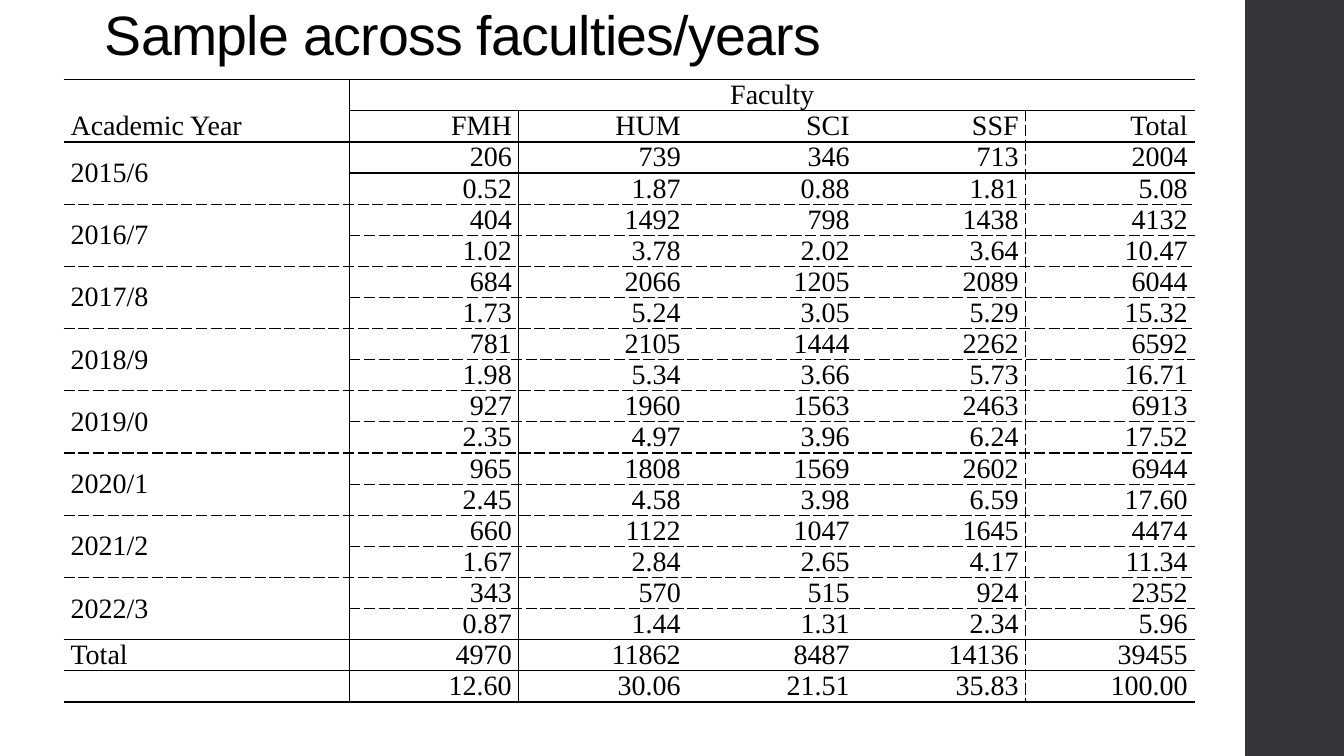
from pptx import Presentation
from pptx.dml.color import RGBColor
from pptx.enum.shapes import MSO_SHAPE as Shape
from pptx.enum.text import MSO_ANCHOR as Anchor, MSO_AUTO_SIZE as AutoSize, PP_ALIGN as Align
from pptx.oxml.ns import qn
from pptx.util import Inches, Pt
from lxml.etree import SubElement

BLACK = RGBColor(0x00, 0x00, 0x00)
CHARCOAL = RGBColor(0x35, 0x35, 0x37)
NO_GRID_STYLE = "{2D5ABB26-0587-4C30-8999-92F81FD0307C}"
SOLID, THICK, DASHED = (1, "solid"), (1.5, "solid"), (1, "dash")

HEADINGS = ["FMH", "HUM", "SCI", "SSF", "Total"]
SAMPLE = [
    ("2015/6", "206 739 346 713 2004", "0.52 1.87 0.88 1.81 5.08"),
    ("2016/7", "404 1492 798 1438 4132", "1.02 3.78 2.02 3.64 10.47"),
    ("2017/8", "684 2066 1205 2089 6044", "1.73 5.24 3.05 5.29 15.32"),
    ("2018/9", "781 2105 1444 2262 6592", "1.98 5.34 3.66 5.73 16.71"),
    ("2019/0", "927 1960 1563 2463 6913", "2.35 4.97 3.96 6.24 17.52"),
    ("2020/1", "965 1808 1569 2602 6944", "2.45 4.58 3.98 6.59 17.60"),
    ("2021/2", "660 1122 1047 1645 4474", "1.67 2.84 2.65 4.17 11.34"),
    ("2022/3", "343 570 515 924 2352", "0.87 1.44 1.31 2.34 5.96"),
    ("Total", "4970 11862 8487 14136 39455", "12.60 30.06 21.51 35.83 100.00"),
]


def apply(target, values):
    """Set each named attribute of the target."""
    for name, value in values.items():
        setattr(target, name, value)


def add_title(page, left, top, width, height):
    """Place and format the title placeholder."""
    title = page.shapes.title
    apply(title, {"left": Inches(left), "top": Inches(top),
                  "width": Inches(width), "height": Inches(height)})
    apply(title.text_frame, {"text": "Sample across faculties/years", "word_wrap": True,
                             "auto_size": AutoSize.NONE, "vertical_anchor": Anchor.BOTTOM})
    para = title.text_frame.paragraphs[0]
    apply(para, {"alignment": Align.LEFT, "line_spacing": 0.9})
    span = para.runs[0]
    apply(span.font, {"name": "Arial", "size": Pt(39.6)})
    span.font.color.rgb = BLACK
    span.font._element.set("spc", "-50")


def add_sidebar(page, left, top, width, height):
    """Draw the dark band at the right edge."""
    band = page.shapes.add_shape(Shape.RECTANGLE, Inches(left), Inches(top),
                                 Inches(width), Inches(height))
    band.shadow.inherit = False
    band.fill.solid()
    band.fill.fore_color.rgb = CHARCOAL
    band.line.fill.background()


def row_rule(edge, column, last):
    """Return the horizontal rule at a row edge, or None."""
    if edge == 1:
        return SOLID if column else None
    if edge == 2:
        return THICK
    if edge in (0, last - 2, last):
        return SOLID
    return DASHED if edge % 2 == 0 else None


def column_rule(edge, row):
    """Return the vertical rule at a column edge, or None."""
    if edge == 1:
        return SOLID
    return DASHED if edge == 5 and row else None


def draw_borders(cell, row, column, last):
    """Rule the four sides of a cell, allowing for its span."""
    sides = {
        "a:lnL": column_rule(column, row),
        "a:lnR": column_rule(column + cell.span_width, row),
        "a:lnT": row_rule(row, column, last),
        "a:lnB": row_rule(row + cell.span_height, column, last),
    }
    properties = cell._tc.get_or_add_tcPr()
    for tag, rule in sides.items():
        if rule:
            points, dash = rule
            line = SubElement(properties, qn(tag), w=str(Pt(points)))
            SubElement(SubElement(line, qn("a:solidFill")), qn("a:srgbClr"), val=str(BLACK))
            SubElement(line, qn("a:prstDash"), val=dash)


def fill_cell(cell, text, alignment, anchor):
    """Write and format the text of a cell."""
    cell.fill.background()
    apply(cell, {"margin_left": Inches(0.07), "margin_right": Inches(0.07),
                 "margin_top": 0, "margin_bottom": 0, "vertical_anchor": anchor})
    para = cell.text_frame.paragraphs[0]
    para.alignment = alignment
    if text:
        span = para.add_run()
        span.text = text
        apply(span.font, {"name": "Times New Roman", "size": Pt(20)})
        span.font.color.rgb = BLACK


def add_sample_table(page, left, top, width, row_height):
    """Build the table of counts and percentages by year and faculty."""
    rows = [["Academic Year", "Faculty", "", "", "", ""], ["", *HEADINGS]]
    for year, counts, shares in SAMPLE:
        rows += [[year, *counts.split()], ["", *shares.split()]]
    last = len(rows)
    frame = page.shapes.add_table(last, 6, Inches(left), Inches(top),
                                  Inches(width), Inches(row_height * last))
    table = frame.table
    apply(table, {"first_row": False, "horz_banding": False})
    table._tbl.tblPr.find(qn("a:tableStyleId")).text = NO_GRID_STYLE
    year_width = 2.84
    for index, column in enumerate(table.columns):
        column.width = Inches((width - year_width) / 5 if index else year_width)
    table.cell(0, 1).merge(table.cell(0, 5))
    for top_row in range(0, last - 2, 2):
        table.cell(top_row, 0).merge(table.cell(top_row + 1, 0))
    for row, texts in enumerate(rows):
        for column, text in enumerate(texts):
            cell = table.cell(row, column)
            draw_borders(cell, row, column, last)
            alignment = Align.RIGHT if column else Align.LEFT
            anchor = Anchor.TOP
            if text == "Faculty":
                alignment = Align.CENTER
            if column == 0 and row < last - 2:
                anchor = Anchor.MIDDLE if row else Anchor.BOTTOM
            fill_cell(cell, text, alignment, anchor)


def main():
    """Build and save the deck."""
    deck = Presentation()
    apply(deck, {"slide_width": Inches(13.33), "slide_height": Inches(7.5)})
    page = deck.slides.add_slide(deck.slide_layouts.get_by_name("Title Only"))
    add_sidebar(page, 12.35, 0, 0.98, 7.5)
    add_title(page, 0.94, 0, 10.6, 0.72)
    add_sample_table(page, 0.63, 0.79, 11.22, 0.28)
    deck.save("out.pptx")


if __name__ == "__main__":
    main()
